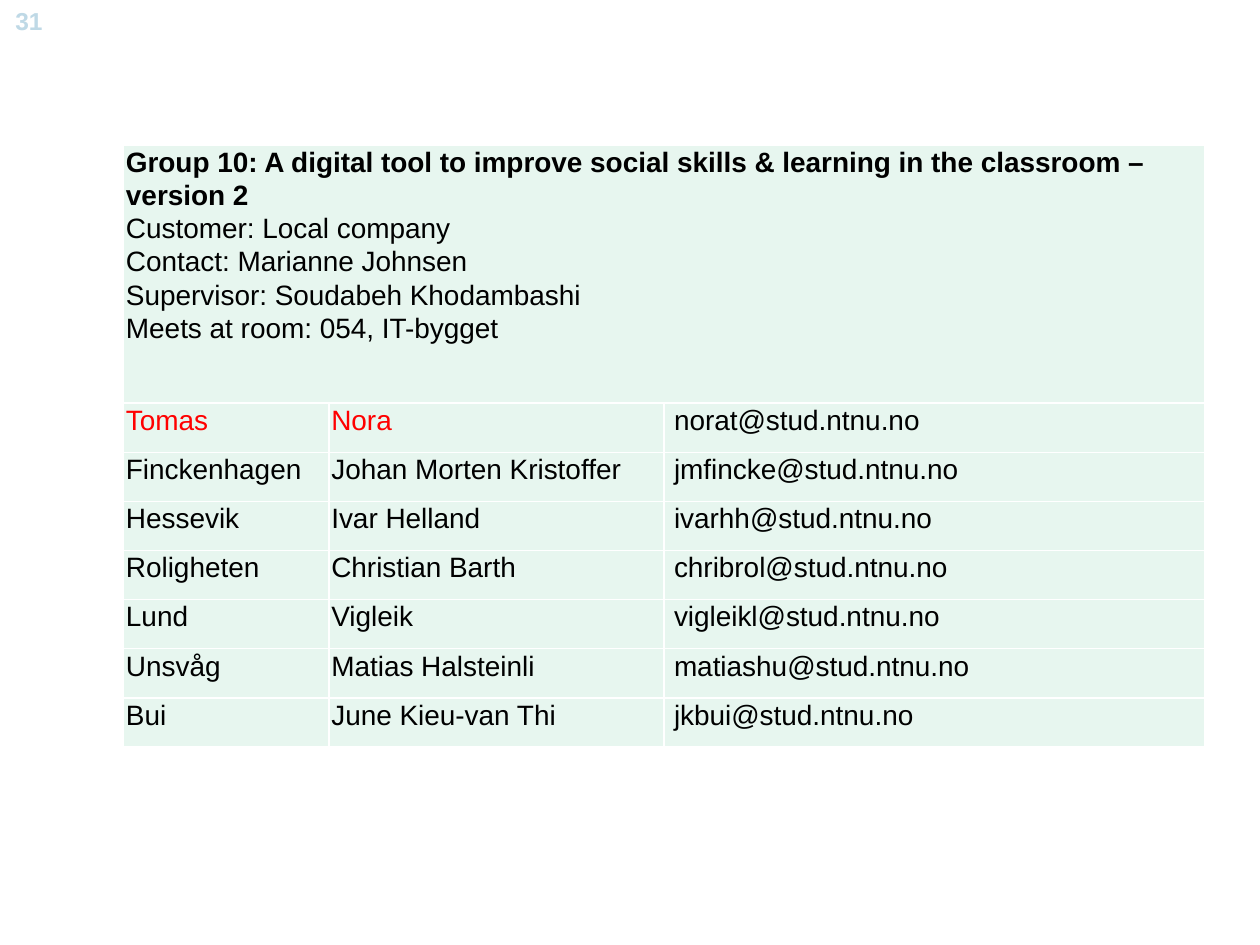
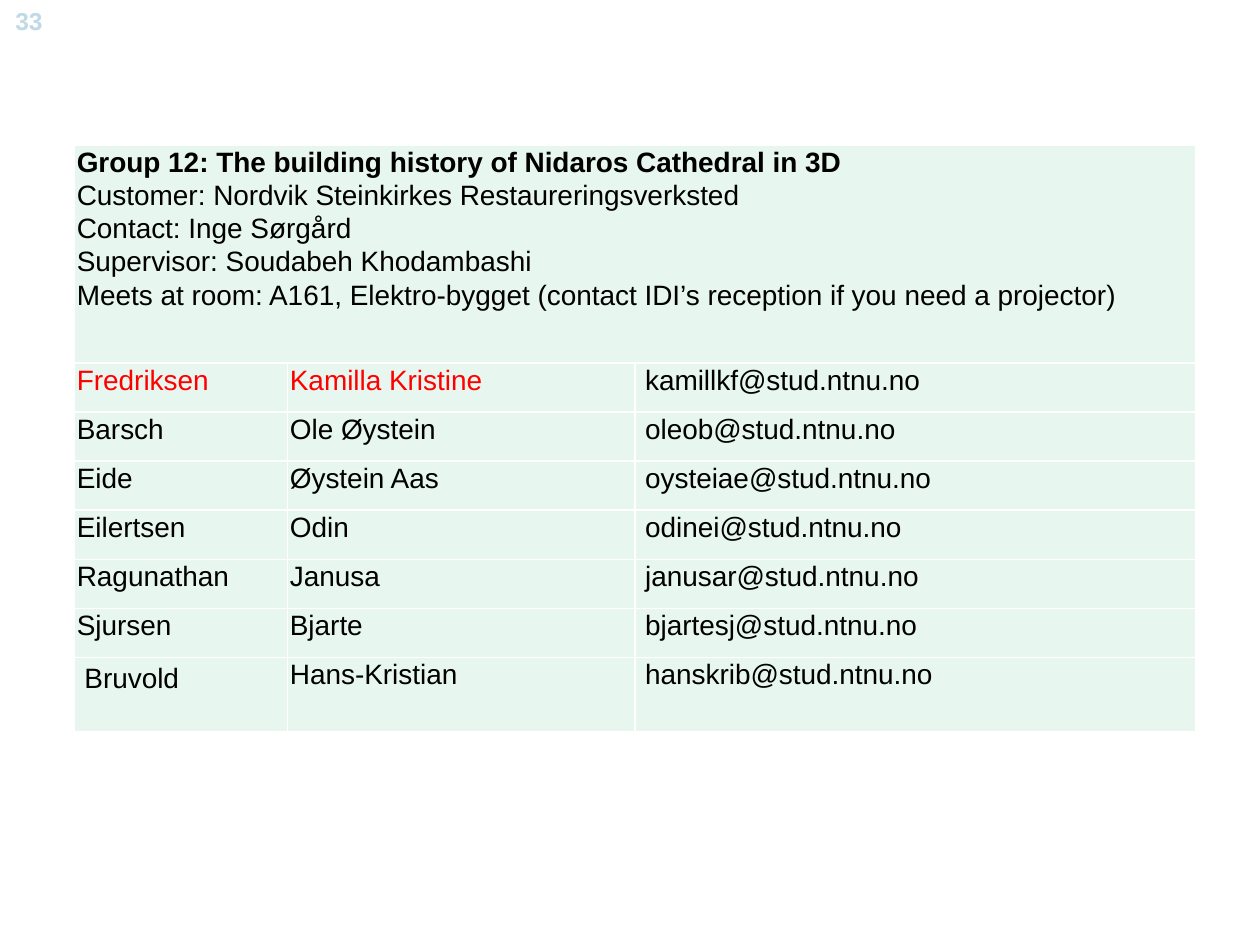
"""Builds the slides that list student project groups."""
from lxml.etree import SubElement
from pptx import Presentation
from pptx.dml.color import RGBColor
from pptx.enum.text import PP_ALIGN
from pptx.oxml.ns import qn
from pptx.util import Inches, Pt

BLACK = RGBColor(0x00, 0x00, 0x00)
RED = RGBColor(0xFF, 0x00, 0x00)
MINT = RGBColor(0xE7, 0xF6, 0xEF)
PALE = RGBColor(0xBF, 0xD9, 0xE6)
WHITE = RGBColor(0xFF, 0xFF, 0xFF)

COLS, ROWS = 100, 75
SPLIT = (0.19, 0.31, 0.5)
ROW = 3.9
INSET, DEEP = 0.2, 0.8
TOP = 11.5
PAGE = {"name": "Arial", "size": Pt(14), "bold": True}
BODY = {"name": "Arial", "size": Pt(16), "bold": False}
HEAD = {**BODY, "bold": True}

GROUPS = [
    {
        "page": "31", "left": 9.8, "width": 85.8, "head": 20.5,
        "lines": [
            "Group 10: A digital tool to improve social skills & learning in the classroom – version 2",
            "Customer: Local company",
            "Contact: Marianne Johnsen",
            "Supervisor: Soudabeh Khodambashi",
            "Meets at room: 054, IT-bygget",
        ],
        "team": [
            ("Tomas", "Nora", "norat@stud.ntnu.no"),
            ("Finckenhagen", "Johan Morten Kristoffer", "jmfincke@stud.ntnu.no"),
            ("Hessevik", "Ivar Helland", "ivarhh@stud.ntnu.no"),
            ("Roligheten", "Christian Barth", "chribrol@stud.ntnu.no"),
            ("Lund", "Vigleik", "vigleikl@stud.ntnu.no"),
            ("Unsvåg", "Matias Halsteinli", "matiashu@stud.ntnu.no"),
            ("Bui", "June Kieu-van Thi", "jkbui@stud.ntnu.no"),
        ],
    },
    {
        "page": "33", "left": 5.9, "width": 89, "head": 17.3,
        "lines": [
            "Group 12: The building history of Nidaros Cathedral in 3D",
            "Customer: Nordvik Steinkirkes Restaureringsverksted",
            "Contact: Inge Sørgård",
            "Supervisor: Soudabeh Khodambashi",
            "Meets at room: A161, Elektro-bygget (contact IDI’s reception if you need a projector)",
        ],
        "team": [
            ("Fredriksen", "Kamilla Kristine", "kamillkf@stud.ntnu.no"),
            ("Barsch", "Ole Øystein", "oleob@stud.ntnu.no"),
            ("Eide", "Øystein Aas", "oysteiae@stud.ntnu.no"),
            ("Eilertsen", "Odin", "odinei@stud.ntnu.no"),
            ("Ragunathan", "Janusa", "janusar@stud.ntnu.no"),
            ("Sjursen", "Bjarte", "bjartesj@stud.ntnu.no"),
            ("Bruvold", "Hans-Kristian", "hanskrib@stud.ntnu.no"),
        ],
        "last": 5.9,
    },
]


def apply(item, values):
    for name, value in values.items():
        setattr(item, name, value)


class Deck:
    """Holds the slide grid, the shared style and the current slide."""

    def __init__(self):
        self.show = Presentation()
        apply(self.show, {"slide_width": Inches(10), "slide_height": Inches(7.5)})
        self.slide = None

    def x(self, cols):
        return round(self.show.slide_width * cols / COLS)

    def y(self, rows):
        return round(self.show.slide_height * rows / ROWS)

    def start(self, page):
        self.slide = self.show.slides.add_slide(self.show.slide_layouts[6])
        box = self.slide.shapes.add_textbox(0, 0, self.x(4.6), self.y(4.2))
        box.text_frame.word_wrap = True
        para = box.text_frame.paragraphs[0]
        para.alignment = PP_ALIGN.CENTER
        self.run(para, page, PAGE, PALE)

    def run(self, para, text, style, color):
        run = para.add_run()
        run.text = text
        apply(run.font, style)
        run.font.color.rgb = color

    def border(self, cell):
        props = cell._tc.get_or_add_tcPr()
        for side in ("lnL", "lnR", "lnT", "lnB"):
            line = SubElement(props, qn(f"a:{side}"), w=str(Pt(1)))
            fill = SubElement(line, qn("a:solidFill"))
            SubElement(fill, qn("a:srgbClr"), val=str(WHITE))

    def cell(self, cell, lines, color=BLACK, first=BODY, left=INSET, top=0):
        self.border(cell)
        cell.fill.solid()
        cell.fill.fore_color.rgb = MINT
        apply(cell, {"margin_left": self.x(left), "margin_right": self.x(INSET),
                     "margin_top": self.y(top), "margin_bottom": 0})
        frame = cell.text_frame
        for i, text in enumerate(lines):
            para = frame.add_paragraph() if i else frame.paragraphs[0]
            para.line_spacing = 1.07
            self.run(para, text, BODY if i else first, color)

    def table(self, left, width, head, lines, team, last=ROW):
        tall = [head] + [ROW] * (len(team) - 1) + [last]
        table = self.slide.shapes.add_table(
            len(tall), len(SPLIT), self.x(left), self.y(TOP),
            self.x(width), self.y(sum(tall))).table
        apply(table, {"first_row": False, "horz_banding": False})
        for col, share in zip(table.columns, SPLIT):
            col.width = self.x(width * share)
        for row, size in zip(table.rows, tall):
            row.height = self.y(size)
        table.cell(0, 0).merge(table.cell(0, len(SPLIT) - 1))
        self.cell(table.cell(0, 0), lines, first=HEAD)
        for r, names in enumerate(team, 1):
            for c, text in enumerate(names):
                mail = c == len(SPLIT) - 1
                low = c == 0 and tall[r] > ROW
                self.cell(table.cell(r, c), [text],
                          color=RED if r == 1 and not mail else BLACK,
                          left=DEEP if mail or low else INSET,
                          top=0.3 if low else 0)


def main():
    deck = Deck()
    for group in GROUPS:
        deck.start(group["page"])
        deck.table(**{key: val for key, val in group.items() if key != "page"})
    deck.show.save("out.pptx")


if __name__ == "__main__":
    main()
